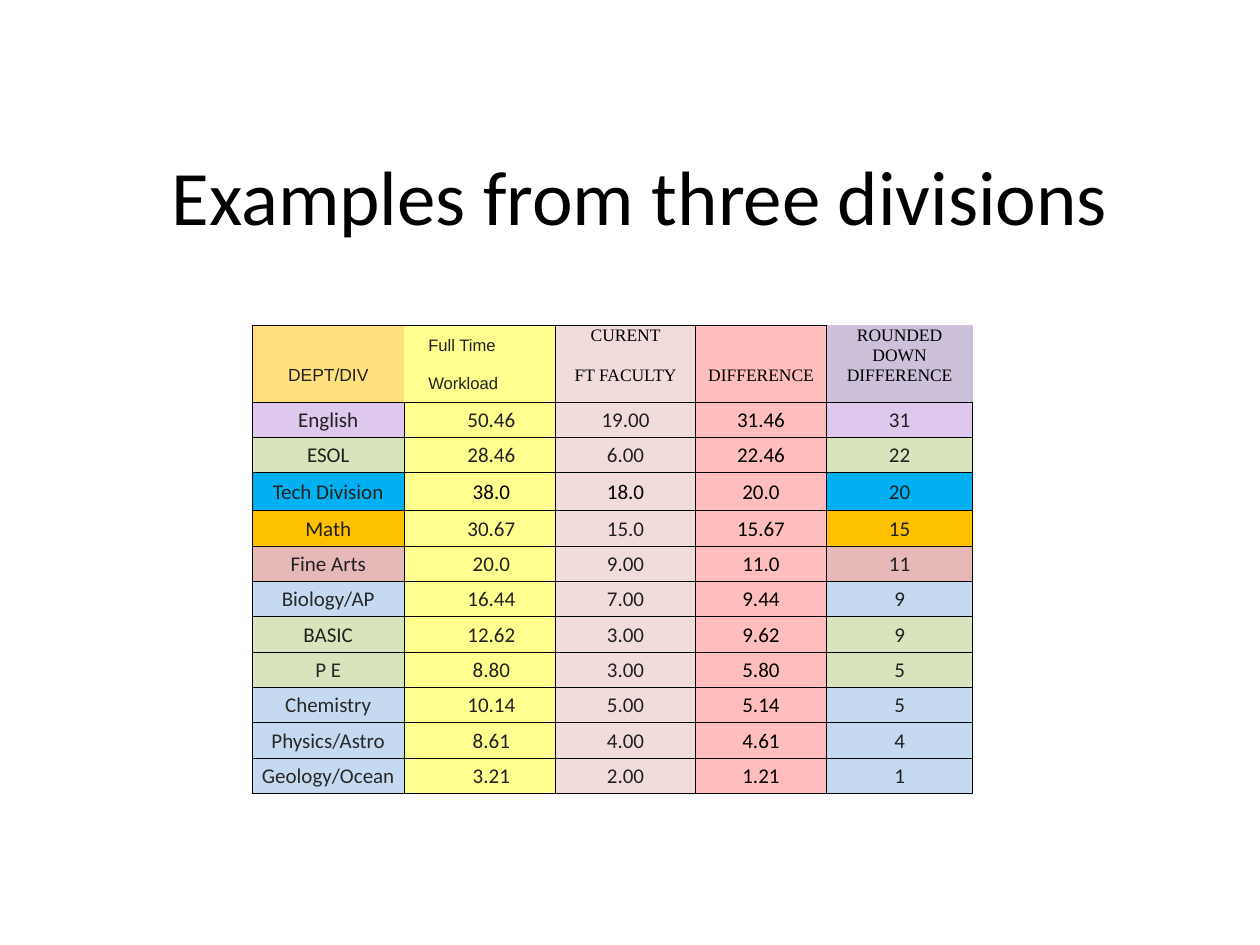
from dataclasses import dataclass

from lxml import etree
from pptx import Presentation
from pptx import util as u
from pptx.dml.color import RGBColor
from pptx.enum import text
from pptx.oxml.ns import qn


@dataclass(frozen=True)
class Theme:
    black: str = "000000"
    dark: str = "212121"
    soft: str = "282828"
    lilac: str = "DEC8EE"
    green: str = "D8E4BC"
    cyan: str = "00B0F0"
    amber: str = "FFC000"
    rose: str = "E6B9B8"
    blue: str = "C5D9F1"
    heads: tuple = ("FFE07D", "FFFF8F", "F2DCDB", "FFBDBD", "CCC0DA")
    body: str = "Calibri"
    sans: str = "Arial"
    serif: str = "Times New Roman"
    title_size: float = 44
    body_size: float = 12
    head_size: float = 10
    workload_size: float = 9.5
    rule: float = 0.5


T = Theme()
COLUMNS = (1.21, 1.2, 1.11, 1.04, 1.16)
HEAD_ROWS, HEAD_HEIGHT = 2, 0.295
TABLE_HEIGHT, TECH_HEIGHT = 3.7, 0.3
WORKLOAD, DIFFERENCE, ROUNDED = 1, 3, 4

HEADINGS = (
    ("", "Full Time", "CURENT", "", "ROUNDED DOWN"),
    ("DEPT/DIV", "Workload", "FT FACULTY", "DIFFERENCE", "DIFFERENCE"),
)
# Sides ruled around each heading, seen as one two-row block
HEAD_SIDES = ("LTB", "TRB", "LTRB", "LTRB", "LB")

# Department, its colour, its name's colour, then the four figures
DEPARTMENTS = (
    ("English", T.lilac, T.dark, "50.46", "19.00", "31.46", "31"),
    ("ESOL", T.green, T.dark, "28.46", "6.00", "22.46", "22"),
    ("Tech Division", T.cyan, T.dark, "38.0", "18.0", "20.0", "20"),
    ("Math", T.amber, T.dark, "30.67", "15.0", "15.67", "15"),
    ("Fine Arts", T.rose, T.dark, "20.0", "9.00", "11.0", "11"),
    ("Biology/AP", T.blue, T.soft, "16.44", "7.00", "9.44", "9"),
    ("BASIC", T.green, T.dark, "12.62", "3.00", "9.62", "9"),
    ("P E", T.green, T.soft, "8.80", "3.00", "5.80", "5"),
    ("Chemistry", T.blue, T.soft, "10.14", "5.00", "5.14", "5"),
    ("Physics/Astro", T.blue, T.soft, "8.61", "4.00", "4.61", "4"),
    ("Geology/Ocean", T.blue, T.soft, "3.21", "2.00", "1.21", "1"),
)


def add_run(paragraph, words, font, size, colour):
    run = paragraph.add_run()
    run.text = words
    run.font.name = font
    run.font.size = u.Pt(size)
    run.font.color.rgb = RGBColor.from_string(colour)


def rule_cell(cell, sides):
    """Rule the named sides of a cell and clear the others."""
    properties = cell._tc.get_or_add_tcPr()
    for side in "LRTB":
        line = etree.SubElement(properties, qn(f"a:ln{side}"), w=str(u.Pt(T.rule)))
        if side in sides:
            fill = etree.SubElement(line, qn("a:solidFill"))
            etree.SubElement(fill, qn("a:srgbClr"), val=T.black)
        else:
            etree.SubElement(line, qn("a:noFill"))


def fill_cell(cell, column, words, fill, sides, font, size, colour, middle, centred):
    rule_cell(cell, sides)
    cell.fill.solid()
    cell.fill.fore_color.rgb = RGBColor.from_string(fill)
    cell.margin_left = u.Inches(0.19 if column == WORKLOAD else 0.01)
    cell.margin_right = cell.margin_top = u.Inches(0.01)
    cell.margin_bottom = 0
    anchors = text.MSO_ANCHOR
    cell.vertical_anchor = anchors.MIDDLE if middle else anchors.TOP
    paragraph = cell.text_frame.paragraphs[0]
    paragraph.alignment = text.PP_ALIGN.CENTER if centred else text.PP_ALIGN.LEFT
    if words:
        add_run(paragraph, words, font, size, colour)
    else:  # keeps an empty heading from stretching its row
        etree.SubElement(paragraph._p, qn("a:endParaRPr"), sz=str(int(size * 100)))


def fill_headings(table):
    for row, headings in enumerate(HEADINGS):
        inner_side = "B" if row == 0 else "T"
        for column, words in enumerate(headings):
            is_workload = column == WORKLOAD
            is_sans = column <= WORKLOAD
            fill_cell(
                table.cell(row, column), column, words, T.heads[column],
                HEAD_SIDES[column].replace(inner_side, ""),
                T.sans if is_sans else T.serif,
                T.workload_size if is_workload else T.head_size,
                T.dark if is_sans else T.black,
                middle=is_workload, centred=not is_workload)


def fill_departments(table):
    for row, (name, fill, name_colour, *figures) in enumerate(DEPARTMENTS, HEAD_ROWS):
        is_tech = name == "Tech Division"
        for column, words in enumerate((name, *figures)):
            is_outer = column in (0, ROUNDED)
            colour = name_colour if column == 0 else T.dark
            if column == DIFFERENCE or (is_tech and not is_outer):
                colour = T.black
            fill_cell(
                table.cell(row, column), column, words,
                fill if is_outer else T.heads[column], "LRTB",
                T.body, T.body_size, colour, middle=True, centred=True)


def add_workload_table(slide):
    row_count = HEAD_ROWS + len(DEPARTMENTS)
    table = slide.shapes.add_table(
        row_count, len(COLUMNS), u.Inches(2), u.Inches(2.58),
        u.Inches(sum(COLUMNS)), u.Inches(TABLE_HEIGHT)).table
    table.first_row = table.horz_banding = False
    for column, width in zip(table.columns, COLUMNS):
        column.width = u.Inches(width)
    # Rows other than the headings and Tech Division share the rest equally
    rest = TABLE_HEIGHT - HEAD_ROWS * HEAD_HEIGHT - TECH_HEIGHT
    heights = [HEAD_HEIGHT] * HEAD_ROWS + [
        TECH_HEIGHT if name == "Tech Division" else rest / (len(DEPARTMENTS) - 1)
        for name, *_ in DEPARTMENTS]
    for row, height in zip(table.rows, heights):
        row.height = u.Inches(height)
    fill_headings(table)
    fill_departments(table)


def add_title(slide, words):
    title = slide.shapes.title
    title.left, title.top = u.Inches(0.58), u.Inches(0.92)
    title.width, title.height = u.Inches(9), u.Inches(1.25)
    title.text_frame.vertical_anchor = text.MSO_ANCHOR.MIDDLE
    paragraph = title.text_frame.paragraphs[0]
    paragraph.alignment = text.PP_ALIGN.CENTER
    add_run(paragraph, words, T.body, T.title_size, T.black)


def main():
    deck = Presentation()
    deck.slide_width, deck.slide_height = u.Inches(10), u.Inches(7.5)
    slide = deck.slides.add_slide(deck.slide_layouts.get_by_name("Title Only"))
    add_title(slide, "Examples from three divisions")
    add_workload_table(slide)
    deck.save("out.pptx")


if __name__ == "__main__":
    main()
